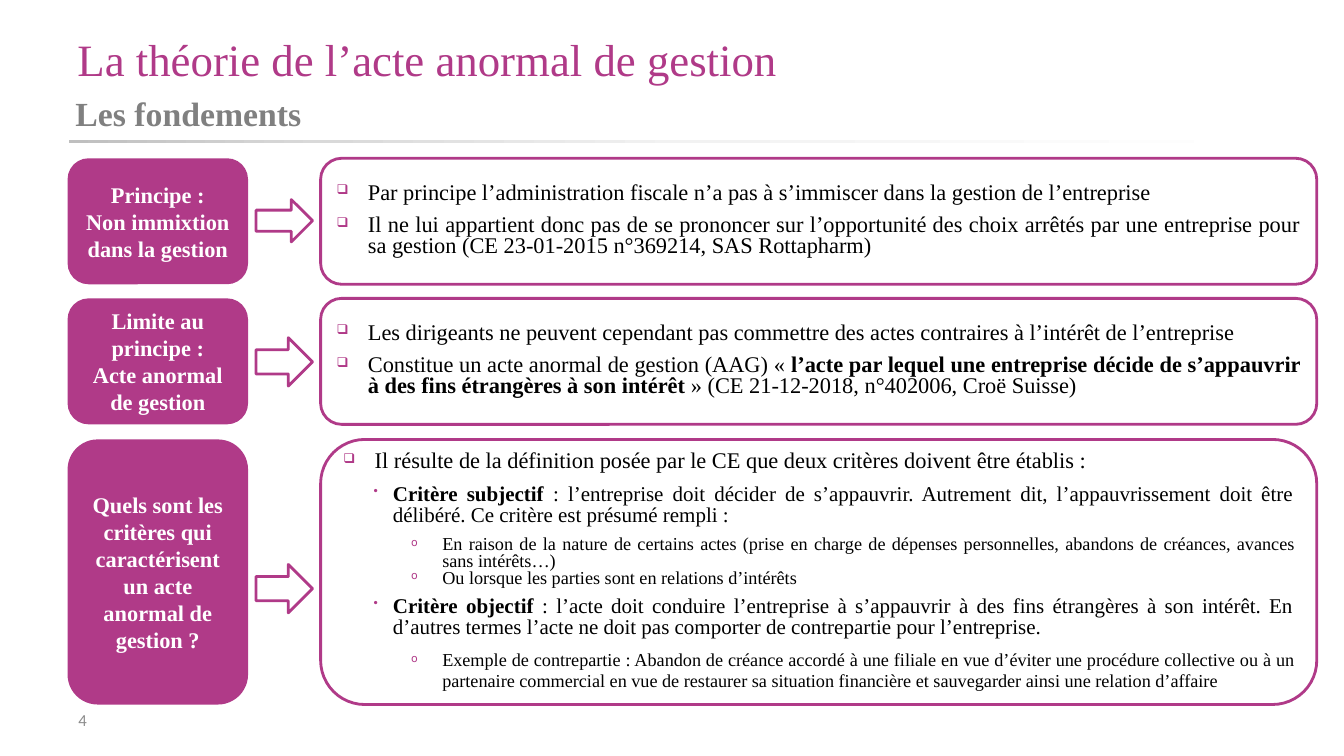
from lxml.etree import SubElement
from pptx import Presentation
from pptx.dml.color import RGBColor as RGB
from pptx.enum.shapes import MSO_SHAPE as SHAPE
from pptx.enum.text import MSO_ANCHOR as ANCHOR, PP_ALIGN as ALIGN
from pptx.oxml.ns import qn
from pptx.util import Emu, Pt

TITLE = "La théorie de l’acte anormal de gestion"
SUBTITLE = "Les fondements"
PAGE = "4"

ROWS = [
    dict(
        top=157, height=125, arrow=(198, 42),
        label=["Principe :", "Non immixtion dans la gestion"],
        points=[
            ("main", ["Par principe l’administration fiscale n’a pas à s’immiscer dans la gestion de l’entreprise"]),
            ("main", ["Il ne lui appartient donc pas de se prononcer sur l’opportunité des choix arrêtés par une "
                      "entreprise pour sa gestion (CE 23-01-2015 n°369214, SAS Rottapharm)"]),
        ],
    ),
    dict(
        top=296, height=125, arrow=(335, 48),
        label=["Limite au principe :", "Acte anormal de gestion"],
        points=[
            ("main", ["Les dirigeants ne peuvent cependant pas commettre des actes contraires à l’intérêt de l’entreprise"]),
            ("main", ["Constitue un acte anormal de gestion (AAG) « ",
                      "l’acte par lequel une entreprise décide de s’appauvrir à des fins étrangères à son intérêt ",
                      "» (CE 21-12-2018, n°402006, Croë Suisse)"]),
        ],
    ),
    dict(
        top=436, height=263, arrow=(560, 48),
        label=["Quels sont les critères qui caractérisent un acte anormal de gestion ?"],
        points=[
            ("main", ["Il résulte de la définition posée par le CE que deux critères doivent être établis :"]),
            ("criterion", ["", "Critère subjectif ",
                           ": l’entreprise doit décider de s’appauvrir. Autrement dit, l’appauvrissement doit être "
                           "délibéré. Ce critère est présumé rempli :"]),
            ("case", ["En raison de la nature de certains actes (prise en charge de dépenses personnelles, "
                      "abandons de créances, avances sans intérêts…)"]),
            ("case", ["Ou lorsque les parties sont en relations d’intérêts"]),
            ("next_criterion", ["", "Critère objectif ",
                                ": l’acte doit conduire l’entreprise à s’appauvrir à des fins étrangères à son intérêt. "
                                "En d’autres termes l’acte ne doit pas comporter de contrepartie pour l’entreprise."]),
            ("example", ["Exemple de contrepartie : Abandon de créance accordé à une filiale en vue d’éviter une "
                         "procédure collective ou à un partenaire commercial en vue de restaurer sa situation "
                         "financière et sauvegarder ainsi une relation d’affaire"]),
        ],
    ),
]

THEME = dict(
    accent="B03A88", white="FFFFFF", ink="000000", grey="808080", page="8C8C8C",
    serif="Times New Roman", sans="Calibri", line=2, bullet_size="60000",
    title=32, subtitle=24.1, label=16, number=12,
    rule=[(0, "BFBFBF"), (21, "D9D9D9"), (51, "F2F2F2"), (100, "FFFFFF")],
)
MAIN = dict(size=16, bullet="❑", level=0, indent=31, hang=31,
            spacing=dict(line_spacing=Pt(15), space_after=Pt(8)))
CRITERION = dict(MAIN, size=15, bullet="•", level=1, indent=49, hang=19)
EXAMPLE = dict(MAIN, size=13, bullet="o", level=2, indent=98)
LEVELS = dict(
    main=MAIN,
    criterion=CRITERION,
    next_criterion=dict(CRITERION, spacing=dict(MAIN["spacing"], space_before=Pt(6))),
    example=EXAMPLE,
    case=dict(EXAMPLE, spacing=dict(line_spacing=Pt(12), space_before=Pt(0), space_after=Pt(0))),
)
LABEL_X, LABEL_W = 67, 179
ARROW_X, ARROW_W = 254, 56
PANEL_X, PANEL_W = 318, 988


def px(n):
    return Emu(n * 9144)


def set_all(obj, values):
    for name, value in values.items():
        setattr(obj, name, value)


def add_run(p, text, size, color, bold=False, font=THEME["serif"]):
    r = p.add_run()
    r.text = text
    set_all(r.font, dict(size=Pt(size), name=font, bold=bold))
    r.font.color.rgb = RGB.from_string(color)


def add_text(s, box, text, size, color, anchor, **style):
    tf = s.shapes.add_textbox(*map(px, box)).text_frame
    set_all(tf, dict(word_wrap=True, vertical_anchor=anchor))
    add_run(tf.paragraphs[0], text, size, color, **style)


def add_shape(s, kind, box, fill, outlined=False):
    sp = s.shapes.add_shape(kind, *map(px, box))
    sp.shadow.inherit = False
    sp.fill.solid()
    sp.fill.fore_color.rgb = RGB.from_string(fill)
    if outlined:
        sp.line.color.rgb = RGB.from_string(THEME["accent"])
        sp.line.width = Pt(THEME["line"])
    else:
        sp.line.fill.background()
    set_all(sp.text_frame, dict(word_wrap=True, vertical_anchor=ANCHOR.MIDDLE))
    return sp


def add_rule(s):
    sp = add_shape(s, SHAPE.RECTANGLE, (68, 139, 1200, 3), THEME["white"])
    sp.fill.gradient()
    sp.fill.gradient_angle = 0
    stops = sp.fill._fill._gradFill.find(qn("a:gsLst"))
    stops.clear()
    for position, color in THEME["rule"]:
        stop = SubElement(stops, qn("a:gs"), pos=str(position * 1000))
        SubElement(stop, qn("a:srgbClr"), val=color)


def add_bullet(p, level):
    pPr = p._p.get_or_add_pPr()
    pPr.set("marL", str(px(level["indent"])))
    pPr.set("indent", str(px(-level["hang"])))
    color = SubElement(pPr, qn("a:buClr"))
    SubElement(color, qn("a:srgbClr"), val=THEME["accent"])
    SubElement(pPr, qn("a:buSzPct"), val=THEME["bullet_size"])
    SubElement(pPr, qn("a:buChar"), char=level["bullet"])


def paragraphs(tf, items):
    for i, item in enumerate(items):
        yield (tf.add_paragraph() if i else tf.paragraphs[0]), item


def add_row(s, row):
    top, height = row["top"], row["height"]
    arrow_top, arrow_height = row["arrow"]
    label = add_shape(s, SHAPE.ROUNDED_RECTANGLE, (LABEL_X, top, LABEL_W, height), THEME["accent"])
    for p, text in paragraphs(label.text_frame, row["label"]):
        p.alignment = ALIGN.CENTER
        add_run(p, text, THEME["label"], THEME["white"], bold=True)

    add_shape(s, SHAPE.RIGHT_ARROW, (ARROW_X, arrow_top, ARROW_W, arrow_height), THEME["white"], True)

    panel = add_shape(s, SHAPE.ROUNDED_RECTANGLE, (PANEL_X, top, PANEL_W, height), THEME["white"], True)
    for p, (name, parts) in paragraphs(panel.text_frame, row["points"]):
        level = LEVELS[name]
        add_bullet(p, level)
        set_all(p, dict(level["spacing"], alignment=ALIGN.JUSTIFY, level=level["level"]))
        for i, text in enumerate(parts):
            if text:
                add_run(p, text, level["size"], THEME["ink"], bold=i == 1)


def main():
    prs = Presentation()
    set_all(prs, dict(slide_width=px(1333), slide_height=px(750)))
    s = prs.slides.add_slide(prs.slide_layouts[6])
    add_text(s, (68, 694, 337, 40), PAGE, THEME["number"], THEME["page"], ANCHOR.MIDDLE, font=THEME["sans"])
    add_rule(s)
    add_text(s, (67, 30, 1200, 56), TITLE, THEME["title"], THEME["accent"], ANCHOR.MIDDLE)
    add_text(s, (65, 87, 1200, 46), SUBTITLE, THEME["subtitle"], THEME["grey"], ANCHOR.TOP, bold=True)
    for row in ROWS:
        add_row(s, row)
    prs.save("out.pptx")


if __name__ == "__main__":
    main()
